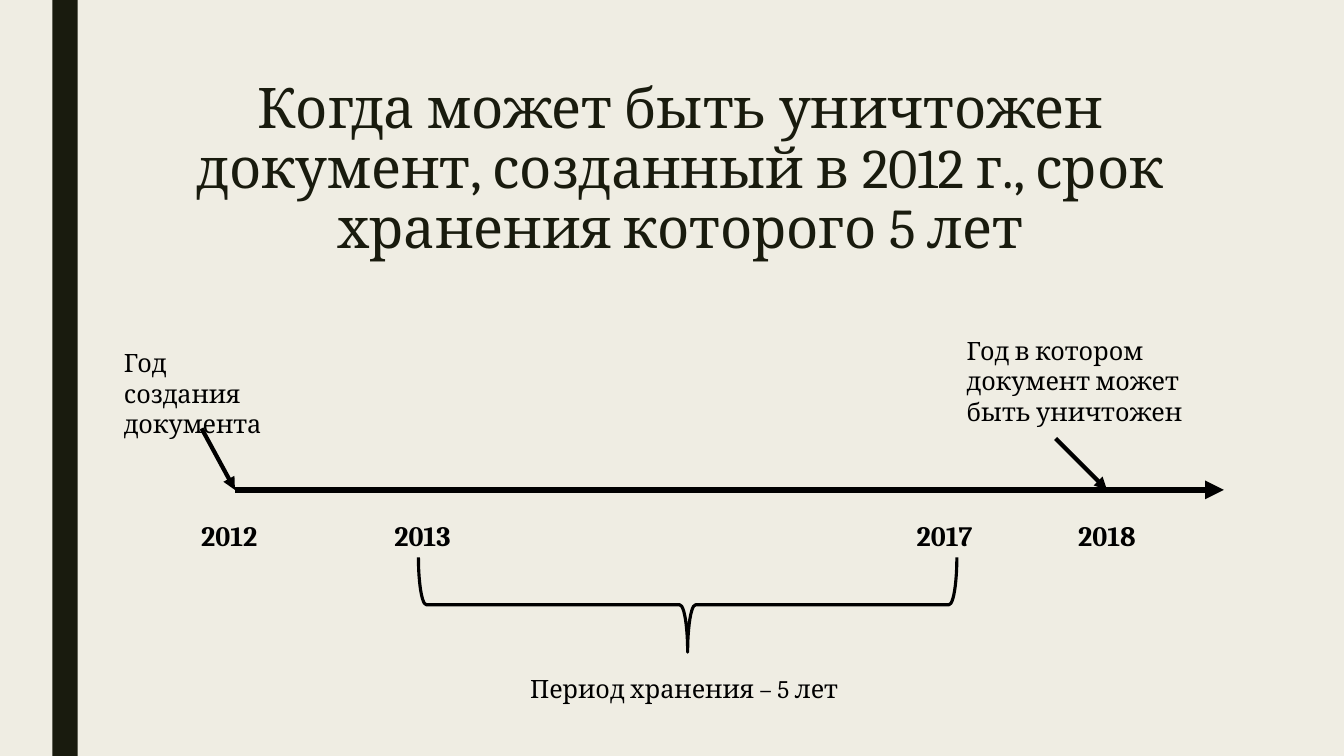
from lxml.etree import SubElement
from pptx import Presentation
from pptx.dml.color import RGBColor
from pptx.enum.shapes import MSO_CONNECTOR, MSO_SHAPE
from pptx.enum.text import MSO_ANCHOR, MSO_AUTO_SIZE, PP_ALIGN
from pptx.oxml.ns import qn
from pptx.util import Inches, Pt

WIDE, HIGH = Inches(13.33), Inches(7.5)
FONT = "Cambria"
INK = {"back": "EFEDE3", "dark": "191B0E", "line": "000000"}
AXIS = 64.8
YEARS = [
    ("2012", 12.75, 8.63),
    ("2013", 27.46, 7.95),
    ("2017", 65.94, 8.7),
    ("2018", 77.94, 8.85),
]
NOTES = [
    ("Год создания документа", (8.48, 45.33, 13.65, 9.47), PP_ALIGN.LEFT),
    ("Год в котором документ может быть уничтожен",
     (71.19, 43.73, 19.95, 13.47), PP_ALIGN.LEFT),
    ("Период хранения – 5 лет", (38.26, 88.4, 25.28, 5.33), PP_ALIGN.CENTER),
]
ARROWS = [
    ((17.48, AXIS), (91.07, AXIS), 4.5),
    ((15, 56.67), (17.48, AXIS), 3),
    ((78.54, 58), (82.37, AXIS), 3),
]


def tint(name):
    """Return the named colour."""
    return RGBColor.from_string(INK[name])


def place(x, y):
    """Turn percentages of the slide's width and height into lengths."""
    return int(WIDE * x / 100), int(HIGH * y / 100)


def area(left, top, width, height):
    """Turn a box in percentages into four lengths."""
    return place(left, top) + place(width, height)


def write(frame, text, size, align, color="line", bold=False):
    """Fill a text frame with one formatted paragraph."""
    frame.word_wrap = True
    frame.text = text
    para = frame.paragraphs[0]
    para.alignment = align
    for run in para.runs:
        run.font.name = FONT
        run.font.size = Pt(size)
        run.font.bold = bold
        run.font.color.rgb = tint(color)


def add_title(slide, text, box):
    """Move and format the title placeholder."""
    title = slide.shapes.title
    title.left, title.top, title.width, title.height = area(*box)
    frame = title.text_frame
    write(frame, text, 40, PP_ALIGN.CENTER, "dark")
    frame.auto_size = MSO_AUTO_SIZE.NONE
    frame.vertical_anchor = MSO_ANCHOR.TOP
    frame.paragraphs[0].line_spacing = 0.89


def add_label(slide, text, box, size, align, bold=False):
    """Add a text box that grows with its text."""
    frame = slide.shapes.add_textbox(*area(*box)).text_frame
    write(frame, text, size, align, bold=bold)
    frame.auto_size = MSO_AUTO_SIZE.SHAPE_TO_FIT_TEXT


def add_arrow(slide, start, end, width):
    """Add a straight arrow between two points."""
    arrow = slide.shapes.add_connector(
        MSO_CONNECTOR.STRAIGHT, *place(*start), *place(*end))
    arrow.line.color.rgb = tint("line")
    arrow.line.width = Pt(width)
    SubElement(arrow.get_or_add_ln(), qn("a:tailEnd"), type="triangle")
    SubElement(arrow.element.spPr, qn("a:effectLst"))


def add_bar(slide, box):
    """Add the dark upright bar."""
    bar = slide.shapes.add_shape(MSO_SHAPE.RECTANGLE, *area(*box))
    bar.shadow.inherit = False
    bar.fill.solid()
    bar.fill.fore_color.rgb = tint("dark")
    bar.line.fill.background()


def add_brace(slide, box):
    """Add a brace turned to point down."""
    brace = slide.shapes.add_shape(MSO_SHAPE.RIGHT_BRACE, *area(*box))
    brace.rotation = 90
    brace.shadow.inherit = False
    brace.fill.background()
    brace.line.color.rgb = tint("line")
    brace.line.width = Pt(2.25)


def main():
    """Build and save the timeline slide."""
    deck = Presentation()
    deck.slide_width, deck.slide_height = WIDE, HIGH
    slide = deck.slides.add_slide(deck.slide_layouts.get_by_name("Title Only"))
    slide.background.fill.solid()
    slide.background.fill.fore_color.rgb = tint("back")
    add_bar(slide, (3.9, 0, 1.88, 100))
    add_title(slide, "Когда может быть уничтожен документ, созданный в 2012 г., "
              "срок хранения которого 5 лет", (11.25, 10, 78.77, 24.13))
    for start, end, width in ARROWS:
        add_arrow(slide, start, end, width)
    for year, left, width in YEARS:
        add_label(slide, year, (left, 67.87, width, 5.87), 20,
                  PP_ALIGN.CENTER, True)
    add_brace(slide, (47.64, 44.4, 7.05, 71.2))
    for text, box, align in NOTES:
        add_label(slide, text, box, 18, align)
    deck.save("out.pptx")


if __name__ == "__main__":
    main()
